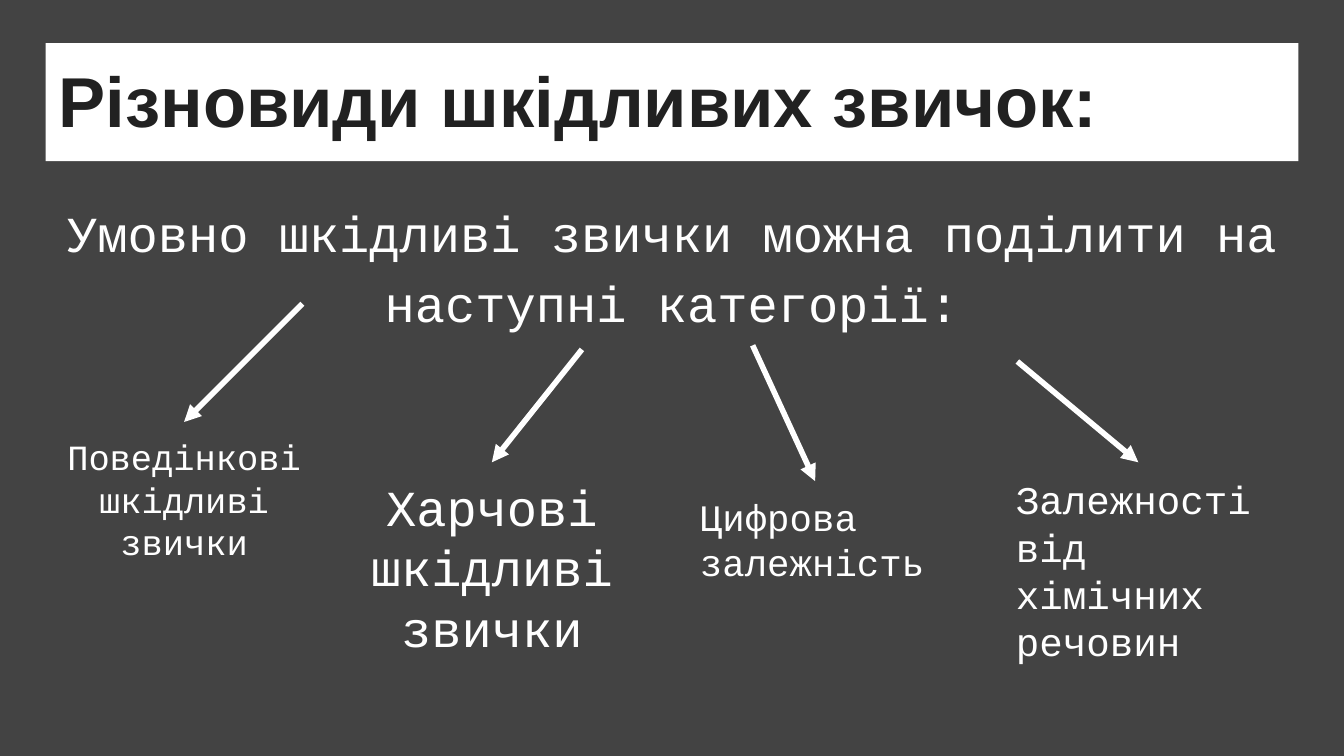
import dataclasses

import lxml.etree
import pptx
import pptx.dml.color
import pptx.enum.shapes
import pptx.enum.text
import pptx.oxml.ns
import pptx.util

CELL = 0.1  # inches per grid column and row
COLS, ROWS = 100, 56.25
EDGE = 3.4
FULL = COLS - 2 * EDGE
WHITE, GREY, INK = "FFFFFF", "434343", "212121"
LEFT = pptx.enum.text.PP_ALIGN.LEFT
MID = pptx.enum.text.PP_ALIGN.CENTER


@dataclasses.dataclass
class Habit:
    text: str
    size: float
    col: float
    row: float
    wide: float
    high: float
    start: tuple[float, float]
    align: pptx.enum.text.PP_ALIGN = LEFT


HABITS = [
    Habit("Поведінкові\nшкідливі звички", 19, 3.6, 31.4, 20.2, 11.6, (22.5, 22.6), MID),
    Habit("Харчові шкідливі звички", 27, 26.5, 34.4, 20.2, 15.7, (43.3, 26), MID),
    Habit("Цифрова залежність", 20, 51.1, 35.8, 19.1, 8.8, (56, 25.7)),
    Habit("Залежності від хімічних речовин", 21, 74.6, 34.4, 20.2, 16.2, (75.7, 26.9)),
]


def cells(count: float) -> int:
    return pptx.util.Inches(count * CELL)


def paint(form, hue: str) -> None:
    """Set a solid colour on a fill or the colour of a font or line."""
    if hasattr(form, "solid"):
        form.solid()
        form = form.fore_color
    else:
        form = form.color
    form.rgb = pptx.dml.color.RGBColor.from_string(hue)


def write(slide, text: str, col: float, row: float, wide: float, high: float, *,
          size: float, font: str = "Courier New", hue: str = WHITE,
          bold: bool = False, align=LEFT, lead: float = 1, after: float = 0,
          fill: str | None = None, grow: bool = False):
    box = slide.shapes.add_textbox(*map(cells, (col, row, wide, high)))
    if fill:
        paint(box.fill, fill)
    frame = box.text_frame
    frame.text = text
    frame.word_wrap = True
    frame.margin_left = frame.margin_right = cells(1)
    frame.margin_top = frame.margin_bottom = cells(1)
    frame.vertical_anchor = pptx.enum.text.MSO_ANCHOR.TOP
    fit = pptx.enum.text.MSO_AUTO_SIZE
    frame.auto_size = fit.SHAPE_TO_FIT_TEXT if grow else fit.NONE
    for para in frame.paragraphs:
        para.alignment = align
        para.line_spacing = lead
        para.space_after = pptx.util.Pt(after)
        for run in para.runs:
            run.font.name = font
            run.font.size = pptx.util.Pt(size)
            run.font.bold = bold
            paint(run.font, hue)
    return box


def point(slide, start: tuple[float, float], box) -> None:
    """Draw an arrow from a grid point to the middle of the box's top."""
    col, row = map(cells, start)
    arrow = slide.shapes.add_connector(
        pptx.enum.shapes.MSO_CONNECTOR.STRAIGHT, col, row, box.left, box.top)
    arrow.end_connect(box, 0)
    arrow.line.width = pptx.util.Pt(3)
    paint(arrow.line, WHITE)
    tag = pptx.oxml.ns.qn
    lxml.etree.SubElement(arrow.line._get_or_add_ln(), tag("a:tailEnd"), type="triangle")
    lxml.etree.SubElement(arrow._element.spPr, tag("a:effectLst"))


def main() -> None:
    deck = pptx.Presentation()
    deck.slide_width, deck.slide_height = cells(COLS), cells(ROWS)
    slide = deck.slides.add_slide(deck.slide_layouts[6])
    paint(slide.background.fill, GREY)
    write(slide, "Різновиди шкідливих звичок:", EDGE, 3.2, FULL, 8.8,
          size=37.8, font="Arial", hue=INK, bold=True, fill=WHITE)
    write(slide, "Умовно шкідливі звички можна поділити на наступні категорії:",
          EDGE, 13.4, FULL, 14.7, size=27, align=MID, lead=1.15, after=12)
    for habit in HABITS:
        box = write(slide, habit.text, habit.col, habit.row, habit.wide, habit.high,
                    size=habit.size, align=habit.align, grow=True)
        point(slide, habit.start, box)
    deck.save("out.pptx")


if __name__ == "__main__":
    main()
